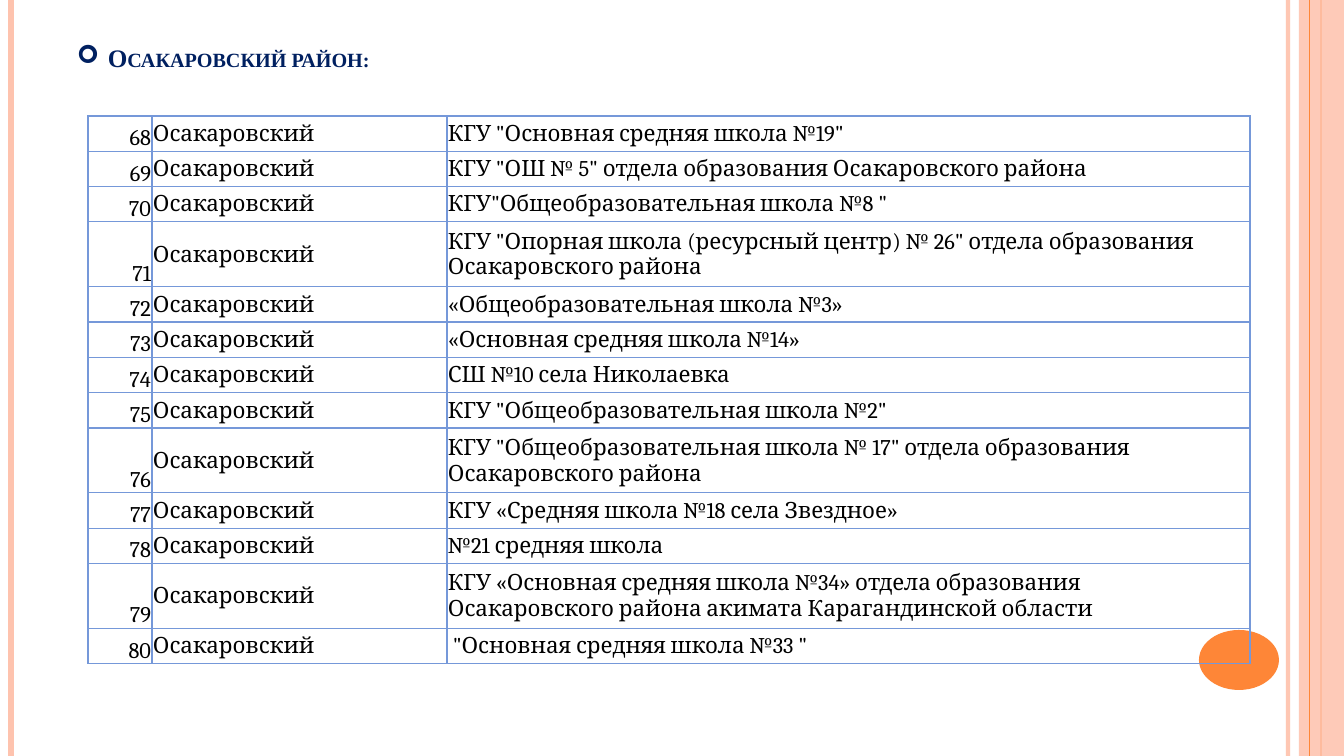
from lxml import etree
from pptx import Presentation
from pptx.dml.color import RGBColor
from pptx.enum.shapes import MSO_CONNECTOR, MSO_SHAPE
from pptx.enum.text import MSO_ANCHOR, PP_ALIGN
from pptx.oxml.ns import qn
from pptx.util import Emu, Pt

TITLE = "Осакаровский район:"
DISTRICT = "Осакаровский"
FIRST_NUMBER = 68
# (school, lines the name takes)
SCHOOLS = [
    ('КГУ "Основная средняя школа №19"', 1),
    ('КГУ "ОШ № 5" отдела образования Осакаровского района', 1),
    ('КГУ"Общеобразовательная школа №8 "', 1),
    ('КГУ "Опорная школа (ресурсный центр) № 26" отдела образования Осакаровского района', 2),
    ("«Общеобразовательная школа №3»", 1),
    ("«Основная средняя школа №14»", 1),
    ("СШ №10 села Николаевка", 1),
    ('КГУ "Общеобразовательная школа №2"', 1),
    ('КГУ "Общеобразовательная школа № 17" отдела образования Осакаровского района', 2),
    ("КГУ «Средняя школа №18 села Звездное»", 1),
    ("№21 средняя школа", 1),
    ("КГУ «Основная средняя школа №34» отдела образования "
     "Осакаровского района акимата Карагандинской области", 2),
    (' "Основная средняя школа №33 "', 1),
]

COLORS = {"peach": "FEC3AE", "orange": "FE8637", "navy": "002060",
          "border": "7598D9", "text": "000000"}
# x, color, width in points, opacity in percent
STRIPES = [(1288, "peach", 3, 93), (11, "peach", 4.5, 100),
           (1321, "orange", 1.5, 100), (1310, "orange", 0.75, 100)]
WIDTH, HEIGHT = 1344, 756
TABLE_X, TABLE_Y, TABLE_H = 88, 116, 548
COLUMNS = [64, 295, 803]
TALL_ROW = 65
ALIGNS = [PP_ALIGN.RIGHT, PP_ALIGN.LEFT, PP_ALIGN.LEFT]
ANCHORS = [MSO_ANCHOR.BOTTOM, MSO_ANCHOR.MIDDLE, MSO_ANCHOR.MIDDLE]


def px(n):
    return Emu(round(n * 914400 / 100.8))


def rgb(name):
    return RGBColor.from_string(COLORS[name])


def set_opacity(parent, percent):
    """Set the opacity of the first solid colour under parent."""
    color = parent.find(".//" + qn("a:srgbClr"))
    etree.SubElement(color, qn("a:alpha")).set("val", str(percent * 1000))


def add_run(p, text, font, size, color):
    r = p.add_run()
    r.text = text
    r.font.name, r.font.size = font, Pt(size)
    r.font.color.rgb = rgb(color)
    return r


def add_stripe(slide, x, color, width, opacity):
    line = slide.shapes.add_connector(MSO_CONNECTOR.STRAIGHT, px(x), 0, px(x), px(HEIGHT))
    line.line.color.rgb = rgb(color)
    line.line.width = Pt(width)
    sp_pr = line._element.spPr
    if opacity < 100:
        set_opacity(sp_pr, opacity)
    etree.SubElement(sp_pr, qn("a:effectLst"))


def add_filled(slide, kind, box, color):
    sp = slide.shapes.add_shape(kind, *map(px, box))
    sp.shadow.inherit = False
    sp.fill.solid()
    sp.fill.fore_color.rgb = rgb(color)
    sp.line.fill.background()
    return sp


def add_title(slide):
    tf = slide.shapes.add_textbox(px(67), px(30), px(1098), px(48)).text_frame
    tf.word_wrap = True
    tf.vertical_anchor = MSO_ANCHOR.BOTTOM
    p = tf.paragraphs[0]
    p_pr = p._p.get_or_add_pPr()
    p_pr.set("marL", str(px(31)))
    p_pr.set("indent", str(-px(31)))
    etree.SubElement(p_pr, qn("a:buFont")).set("typeface", "Wingdings")
    etree.SubElement(p_pr, qn("a:buChar")).set("char", "➢")
    r = add_run(p, TITLE, "Times New Roman", 18, "navy")
    r.font.bold = True
    r._r.get_or_add_rPr().set("cap", "small")


def add_borders(cell):
    tc_pr = cell._tc.get_or_add_tcPr()
    for i, side in enumerate(("lnL", "lnR", "lnT", "lnB")):
        ln = etree.Element(qn("a:" + side), w=str(Pt(1)))
        fill = etree.SubElement(ln, qn("a:solidFill"))
        etree.SubElement(fill, qn("a:srgbClr")).set("val", COLORS["border"])
        tc_pr.insert(i, ln)


def fill_cell(cell, text, align, anchor):
    cell.fill.background()
    cell.margin_left = cell.margin_right = cell.margin_top = px(1)
    cell.margin_bottom = 0
    cell.vertical_anchor = anchor
    p = cell.text_frame.paragraphs[0]
    p.alignment = align
    add_run(p, text, "Cambria", 16, "text")
    add_borders(cell)


def add_school_table(slide):
    frame = slide.shapes.add_table(len(SCHOOLS), len(COLUMNS), px(TABLE_X), px(TABLE_Y),
                                   px(sum(COLUMNS)), px(TABLE_H))
    table = frame.table
    table.first_row = table.horz_banding = False
    for column, width in zip(table.columns, COLUMNS):
        column.width = px(width)
    tall = sum(lines == 2 for _, lines in SCHOOLS)
    short_row = (TABLE_H - tall * TALL_ROW) / (len(SCHOOLS) - tall)
    for i, (school, lines) in enumerate(SCHOOLS):
        table.rows[i].height = px(TALL_ROW if lines == 2 else short_row)
        texts = (str(FIRST_NUMBER + i), DISTRICT, school)
        for cell, text, align, anchor in zip(table.rows[i].cells, texts, ALIGNS, ANCHORS):
            fill_cell(cell, text, align, anchor)


def main():
    prs = Presentation()
    prs.slide_width, prs.slide_height = px(WIDTH), px(HEIGHT)
    slide = prs.slides.add_slide(prs.slide_layouts[6])
    for stripe in STRIPES[:3]:
        add_stripe(slide, *stripe)
    band = add_filled(slide, MSO_SHAPE.RECTANGLE, (1299, 0, 45, HEIGHT), "peach")
    set_opacity(band._element.spPr, 87)
    add_stripe(slide, *STRIPES[3])
    add_filled(slide, MSO_SHAPE.OVAL, (1199, 630, 80, 60), "orange")
    add_title(slide)
    add_school_table(slide)
    prs.save("out.pptx")


if __name__ == "__main__":
    main()
